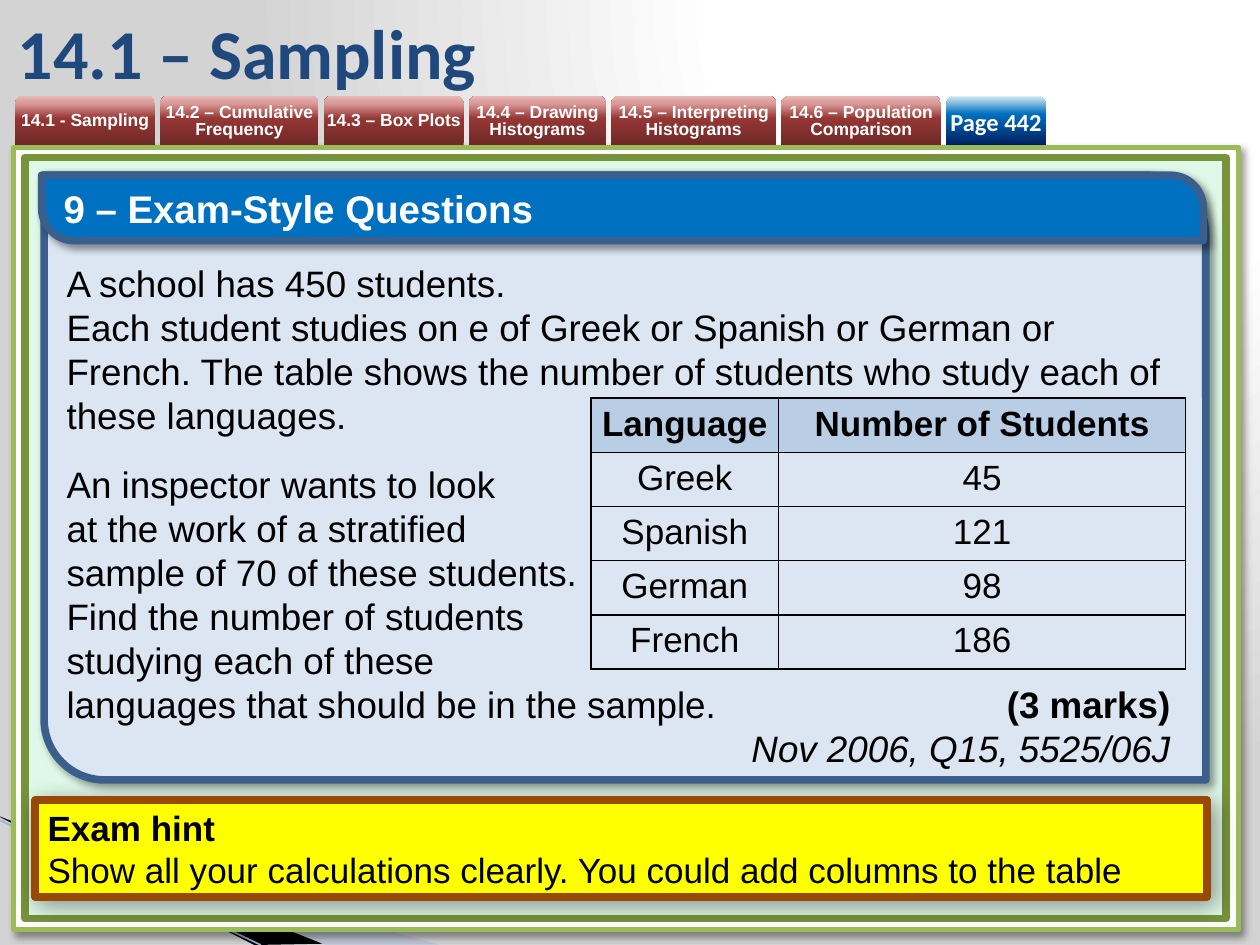
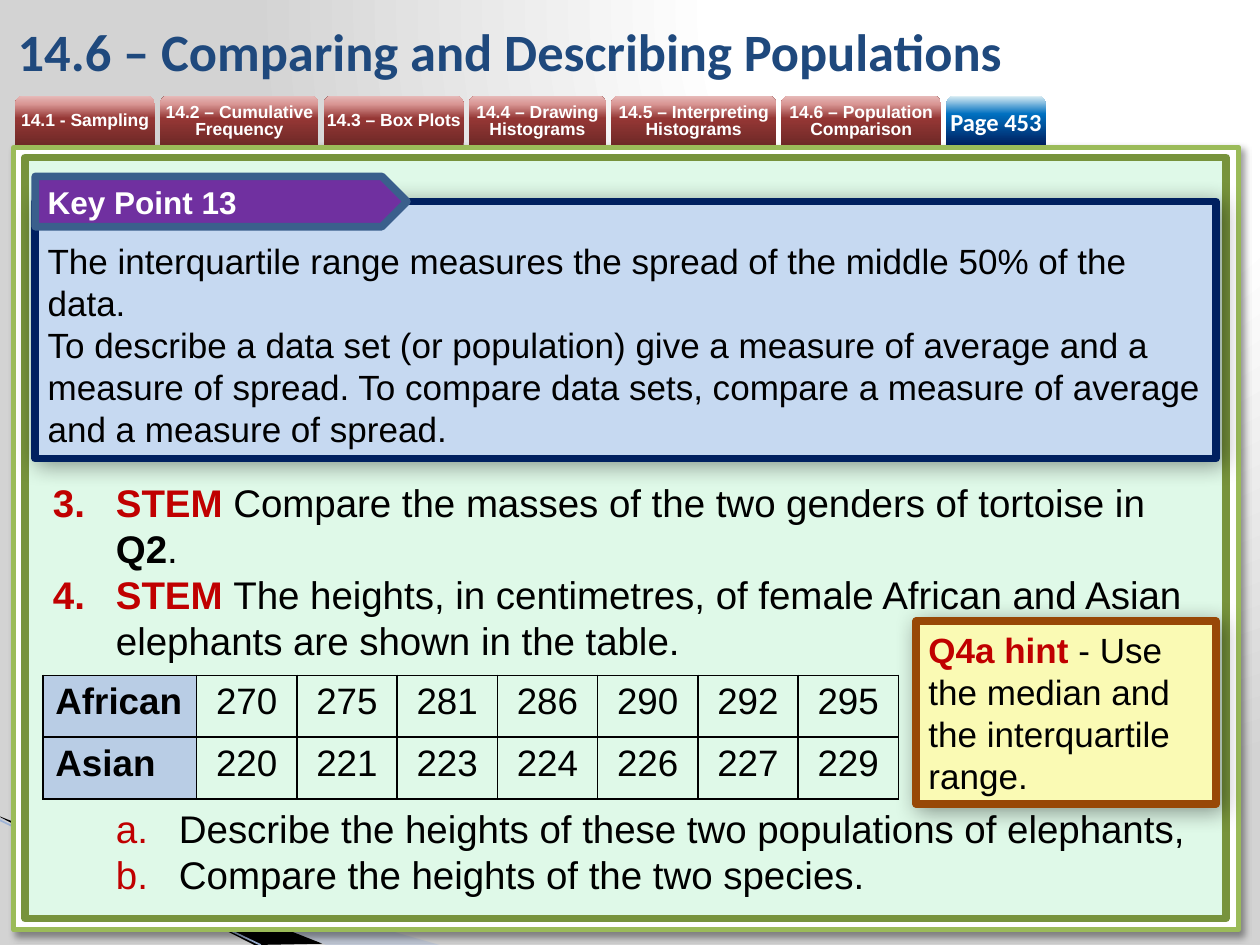
"""Build two statistics lesson slides that share one frame and tab strip."""
from dataclasses import dataclass
from typing import Any, Sequence

from pptx import Presentation
from pptx import util as u
from pptx.dml.color import RGBColor
from pptx.enum import shapes, text
from pptx.oxml import parse_xml
from pptx.oxml.ns import nsdecls, qn

Inches, Pt = u.Inches, u.Pt
SHAPE, ANCHOR, ALIGN = shapes.MSO_SHAPE, text.MSO_ANCHOR, text.PP_ALIGN

BLACK, WHITE, RED = "000000", "FFFFFF", "C00000"
NAVY, BLUE, STEEL, BROWN = "002060", "0070C0", "3A5F8C", "984807"
HEADER_FILL, TITLE_COLOUR = "B9CDE5", "1F497D"
BACKGROUND = ((0, WHITE), (40, WHITE), (100, "D3D3D3"))
TAB_RED = ((0, "6F2927"), (54, "953735"), (83, "D99694"), (100, "E6B9B8"))
TAB_BLUE = ((0, NAVY), (63, BLUE), (100, "DBEEF4"))
UPWARD = '<a:lin ang="16200000" scaled="0"/>'
FROM_TOP_RIGHT = '<a:path path="circle"><a:fillToRect l="65000" t="0" r="0" b="98000"/></a:path>'
THICK = 4.33
TAB_LEFT, TAB_TOP, TAB_HEIGHT, TAB_GAP = 0.12, 0.76, 0.39, 0.04


@dataclass(frozen=True)
class Run:
    text: str
    bold: bool = False
    italic: bool = False
    colour: str = BLACK


@dataclass(frozen=True)
class Para:
    runs: tuple[Run, ...]
    before: float = 0
    align: Any = ALIGN.LEFT
    right_tab: float = 0
    numbering: str = ""
    level: int = 0


@dataclass(frozen=True)
class Box:
    left: float
    top: float
    width: float
    height: float
    fill: str
    line: str = ""
    weight: float = THICK
    kind: Any = SHAPE.RECTANGLE
    blur: float = 0
    adjust: tuple[float, ...] = ()


@dataclass(frozen=True)
class Tab:
    label: str
    width: float


@dataclass(frozen=True)
class Grid:
    left: float
    top: float
    widths: tuple[float, ...]
    row_height: float
    rows: tuple[tuple[str, ...], ...]
    size: float
    side_margin: float
    header_row: bool = False


TABS = (
    Tab("14.1 - Sampling", 1.11),
    Tab("14.2 – Cumulative Frequency", 1.26),
    Tab("14.3 – Box Plots", 1.11),
    Tab("14.4 – Drawing Histograms", 1.09),
    Tab("14.5 – Interpreting Histograms", 1.31),
    Tab("14.6 – Population Comparison", 1.27),
)
PAGE_TAB_LEFT = TAB_LEFT + sum(t.width + TAB_GAP for t in TABS)


def rgb(colour: str) -> RGBColor:
    return RGBColor.from_string(colour)


def place(sp: Any, left: float, top: float, width: float, height: float) -> None:
    sp.left, sp.top = Inches(left), Inches(top)
    sp.width, sp.height = Inches(width), Inches(height)


def set_gradient(parent: Any, stops: Sequence[tuple[int, str]], direction: str) -> None:
    marks = "".join(f'<a:gs pos="{pos * 1000}"><a:srgbClr val="{colour}"/></a:gs>'
                    for pos, colour in stops)
    gradient = parse_xml(f'<a:gradFill {nsdecls("a")} rotWithShape="1">'
                         f'<a:gsLst>{marks}</a:gsLst>{direction}</a:gradFill>')
    parent.replace(parent.find(qn("a:solidFill")), gradient)


def add_shadow(sp: Any, blur: float) -> None:
    sp.element.spPr.find(qn("a:effectLst")).append(parse_xml(
        f'<a:outerShdw {nsdecls("a")} blurRad="{Pt(blur)}" dist="{Pt(3)}" dir="2700000" '
        f'algn="tl" rotWithShape="0"><a:srgbClr val="{BLACK}"><a:alpha val="40000"/>'
        '</a:srgbClr></a:outerShdw>'))


def add_number(p: Any, scheme: str, level: int) -> None:
    pPr = p._p.get_or_add_pPr()
    pPr.set("marL", str(Inches(0.5 + 0.5 * level)))
    pPr.set("indent", str(Inches(-0.5)))
    start = ' startAt="3"' if level == 0 else ""
    for tag in (f'<a:buClr {nsdecls("a")}><a:srgbClr val="{RED}"/></a:buClr>',
                f'<a:buFont {nsdecls("a")} typeface="+mj-lt"/>',
                f'<a:buAutoNum {nsdecls("a")} type="{scheme}"{start}/>'):
        pPr.append(parse_xml(tag))


def write(tf: Any, paras: Sequence[Para], size: float, font: str = "Arial",
          anchor: Any = ANCHOR.MIDDLE) -> None:
    tf.word_wrap = True
    tf.auto_size = text.MSO_AUTO_SIZE.NONE
    tf.vertical_anchor = anchor
    for i, para in enumerate(paras):
        p = tf.add_paragraph() if i else tf.paragraphs[0]
        p.level = para.level
        if para.numbering:
            add_number(p, para.numbering, para.level)
        if para.right_tab:
            p._p.get_or_add_pPr().append(parse_xml(
                f'<a:tabLst {nsdecls("a")}><a:tab pos="{Inches(para.right_tab)}" algn="r"/></a:tabLst>'))
        p.alignment = para.align
        p.space_before = Pt(para.before)
        for part in para.runs:
            done = len(p.runs)
            if done:
                p.add_run().text = part.text
            else:
                p.text = part.text
            for r in p.runs[done:]:
                r.font.name, r.font.size = font, Pt(size)
                r.font.bold, r.font.italic = part.bold, part.italic
                r.font.color.rgb = rgb(part.colour)


def add_box(s: Any, box: Box) -> Any:
    sp = s.shapes.add_shape(box.kind, 0, 0, 0, 0)
    place(sp, box.left, box.top, box.width, box.height)
    for i, value in enumerate(box.adjust):
        sp.adjustments[i] = value
    sp.shadow.inherit = False
    sp.fill.solid()
    sp.fill.fore_color.rgb = rgb(box.fill)
    if box.line:
        sp.line.color.rgb = rgb(box.line)
        sp.line.width = Pt(box.weight)
    else:
        sp.line.fill.background()
    if box.blur:
        add_shadow(sp, box.blur)
    return sp


def add_tab(s: Any, left: float, tab: Tab, stops: Sequence[tuple[int, str]],
            size: float, font: str) -> Any:
    sp = add_box(s, Box(left, TAB_TOP, tab.width, TAB_HEIGHT, WHITE, kind=SHAPE.ROUND_2_SAME_RECTANGLE))
    set_gradient(sp.element.spPr, stops, UPWARD)
    tf = sp.text_frame
    tf.margin_left = tf.margin_right = tf.margin_top = tf.margin_bottom = 0
    write(tf, [Para((Run(tab.label, bold=True, colour=WHITE),), align=ALIGN.CENTER)], size, font)
    return sp


def add_sliver(s: Any, points: Sequence[tuple[float, float]], colour: str, alpha: int) -> None:
    corners = [(Inches(x), Inches(y)) for x, y in points]
    builder = s.shapes.build_freeform(*corners[0])
    builder.add_line_segments(corners[1:], close=True)
    sp = builder.convert_to_shape()
    sp.shadow.inherit = False
    sp.fill.solid()
    sp.fill.fore_color.rgb = rgb(colour)
    sp.line.fill.background()
    sp.element.spPr.find(qn("a:solidFill"))[0].append(
        parse_xml(f'<a:alpha {nsdecls("a")} val="{alpha * 1000}"/>'))


def add_frame(s: Any) -> None:
    add_sliver(s, ((0, 6.5), (3.49, 7.5), (2.59, 7.5), (0, 6.49)), "A7B9DB", 40)
    add_sliver(s, ((0, 6.48), (2.56, 7.49), (2.02, 7.5), (0.01, 6.49)), BLACK, 100)
    edge = s.shapes.add_connector(shapes.MSO_CONNECTOR.STRAIGHT,
                                  Inches(0), Inches(6.51), Inches(2.07), Inches(7.5))
    edge.line.color.rgb = rgb("9EB3D6")
    edge.line.width = Pt(0.95)
    edge.element.spPr.append(parse_xml(f'<a:effectLst {nsdecls("a")}/>'))
    add_box(s, Box(0.11, 1.17, 9.72, 6.21, WHITE, "9BBB59", 3, blur=4))
    add_box(s, Box(0.2, 1.25, 9.53, 6.04, "DFF9E8", "77933C"))
    left = TAB_LEFT
    for tab in TABS:
        add_tab(s, left, tab, TAB_RED, 10, "Arial").text_frame.paragraphs[0].line_spacing = Pt(10)
        left += tab.width + TAB_GAP


def share_frame(prs: Any, s: Any) -> None:
    master = prs.slide_master
    master.background.fill.solid()
    set_gradient(master.element.find(".//" + qn("p:bgPr")), BACKGROUND, FROM_TOP_RIGHT)
    add_frame(s)
    drawn = [sp for sp in s.shapes if not sp.is_placeholder]
    for number, sp in enumerate(drawn, 100):
        sp.element.find(".//" + qn("p:cNvPr")).set("id", str(number))
        master.shapes.element.append(sp.element)


def add_heading(s: Any, title: str, size: float, page: str) -> None:
    place(s.shapes.title, 0.04, 0.05, 8.27, 0.71)
    write(s.shapes.title.text_frame, [Para((Run(title, bold=True, colour=TITLE_COLOUR),))], size, "Calibri")
    add_tab(s, PAGE_TAB_LEFT, Tab(page, 0.79), TAB_BLUE, 14, "Calibri")


def add_grid(s: Any, grid: Grid) -> None:
    tbl = s.shapes.add_table(len(grid.rows), len(grid.widths), Inches(grid.left), Inches(grid.top),
                             Inches(sum(grid.widths)), Inches(grid.row_height * len(grid.rows))).table
    tbl.first_row = tbl.horz_banding = False
    for column, width in zip(tbl.columns, grid.widths):
        column.width = Inches(width)
    for i, row in enumerate(grid.rows):
        tbl.rows[i].height = Inches(grid.row_height)
        for j, label in enumerate(row):
            cell = tbl.cell(i, j)
            head = i == 0 if grid.header_row else j == 0
            cell.margin_left = cell.margin_right = Inches(grid.side_margin)
            cell.margin_top = cell.margin_bottom = Inches(0.05)
            tcPr = cell._tc.get_or_add_tcPr()
            for side in "LRTB":
                tcPr.append(parse_xml(f'<a:ln{side} {nsdecls("a")} w="{Pt(1)}"><a:solidFill>'
                                      f'<a:srgbClr val="{BLACK}"/></a:solidFill></a:ln{side}>'))
            if head:
                cell.fill.solid()
                cell.fill.fore_color.rgb = rgb(HEADER_FILL)
            else:
                cell.fill.background()
            align = ALIGN.LEFT if head and not grid.header_row else ALIGN.CENTER
            write_cell(cell, Para((Run(label, bold=head),), align=align), grid.size)


def write_cell(cell: Any, para: Para, size: float) -> None:
    p = cell.text_frame.paragraphs[0]
    p.text = para.runs[0].text
    p.alignment = para.align
    font = p.runs[0].font
    font.name, font.size, font.bold = "Arial", Pt(size), para.runs[0].bold
    font.color.rgb = rgb(BLACK)


def build_sampling(s: Any) -> None:
    add_heading(s, "14.1 – Sampling", 40, "Page 442")
    diagonal = SHAPE.ROUND_2_DIAG_RECTANGLE
    add_box(s, Box(0.35, 1.39, 9.22, 4.8, "DCE6F2", STEEL, kind=diagonal, blur=4, adjust=(0, 0.1)))
    banner = add_box(s, Box(0.33, 1.39, 9.22, 0.52, BLUE, STEEL, kind=diagonal, blur=4, adjust=(0, 0.5)))
    write(banner.text_frame, [Para((Run("9 – Exam-Style Questions", bold=True, colour=WHITE),))], 22)
    question = s.shapes.add_textbox(0, 0, 0, 0)
    place(question, 0.43, 2.02, 9.08, 4.17)
    write(question.text_frame, [
        Para((Run("A school has 450 students."),)),
        Para((Run("Each student studies on e of Greek or Spanish or German or French. "
                  "The table shows the number of students who study each of these languages."),)),
        Para((Run("An inspector wants to look\vat the work of a stratified\v"
                  "sample of 70 of these students."),), before=14),
        Para((Run("Find the number of students\vstudying each of these\v"
                  "languages that should be in the sample.\t"), Run("(3 marks)", bold=True)), right_tab=8.76),
        Para((Run("\t"), Run("Nov 2006, Q15, 5525/06J", italic=True)), right_tab=8.76),
    ], 21, anchor=ANCHOR.TOP)
    add_grid(s, Grid(4.69, 3.16, (1.49, 3.23), 0.43, (
        ("Language", "Number of Students"), ("Greek", "45"), ("Spanish", "121"),
        ("German", "98"), ("French", "186")), 20, 0.05, header_row=True))
    hint = add_box(s, Box(0.28, 6.35, 9.3, 0.77, "FFFF00", BROWN, blur=13))
    write(hint.text_frame, [
        Para((Run("Exam hint", bold=True),)),
        Para((Run("Show all your calculations clearly. You could add columns to the table"),)),
    ], 20)


def build_populations(s: Any) -> None:
    add_heading(s, "14.6 – Comparing and Describing Populations", 30, "Page 453")
    stem = Run("STEM ", bold=True, colour=RED)
    questions = s.placeholders[1]
    place(questions, 0.32, 3.75, 9.32, 3.47)
    write(questions.text_frame, [
        Para((stem, Run("Compare the masses of the two genders of tortoise in "),
              Run("Q2", bold=True), Run(".")), numbering="arabicPeriod"),
        Para((stem, Run("The heights, in centimetres, of female African and Asian elephants "
                        "are shown in the table.")), numbering="arabicPeriod"),
        Para((Run("Describe the heights of these two populations of elephants,"),),
             before=81, numbering="alphaLcPeriod", level=1),
        Para((Run("Compare the heights of the two species."),), numbering="alphaLcPeriod", level=1),
    ], 22, anchor=ANCHOR.TOP)
    add_grid(s, Grid(0.34, 5.36, (1.22,) + ((6.79 - 1.22) / 7,) * 7, 0.49, (
        ("African", "270", "275", "281", "286", "290", "292", "295"),
        ("Asian", "220", "221", "223", "224", "226", "227", "229")), 21, 0.1))
    key_point = add_box(s, Box(0.28, 1.6, 9.37, 2.04, "C6D9F1", NAVY, blur=13))
    key_point.text_frame.margin_top = Inches(0.3)
    write(key_point.text_frame, [
        Para((Run("The interquartile range measures the spread of the middle 50% of the data."),)),
        Para((Run("To describe a data set (or population) give a measure of average and a measure of "
                  "spread. To compare data sets, compare a measure of average and a measure of spread."),)),
    ], 20, anchor=ANCHOR.TOP)
    label = add_box(s, Box(0.28, 1.4, 2.95, 0.4, "7030A0", STEEL, kind=SHAPE.PENTAGON))
    write(label.text_frame, [Para((Run("Key Point 13", bold=True, colour=WHITE),))], 18)
    hint = add_box(s, Box(7.27, 4.93, 2.38, 1.45, "FAFAB4", BROWN, blur=13))
    write(hint.text_frame, [Para((Run("Q4a hint", bold=True, colour=RED),
                                  Run(" - Use the median and the interquartile range.")))], 20)


def main() -> None:
    prs = Presentation()
    prs.slide_width, prs.slide_height = Inches(10), Inches(7.5)
    sampling = prs.slides.add_slide(prs.slide_layouts[5])
    share_frame(prs, sampling)
    build_sampling(sampling)
    build_populations(prs.slides.add_slide(prs.slide_layouts[1]))
    prs.save("out.pptx")


if __name__ == "__main__":
    main()
